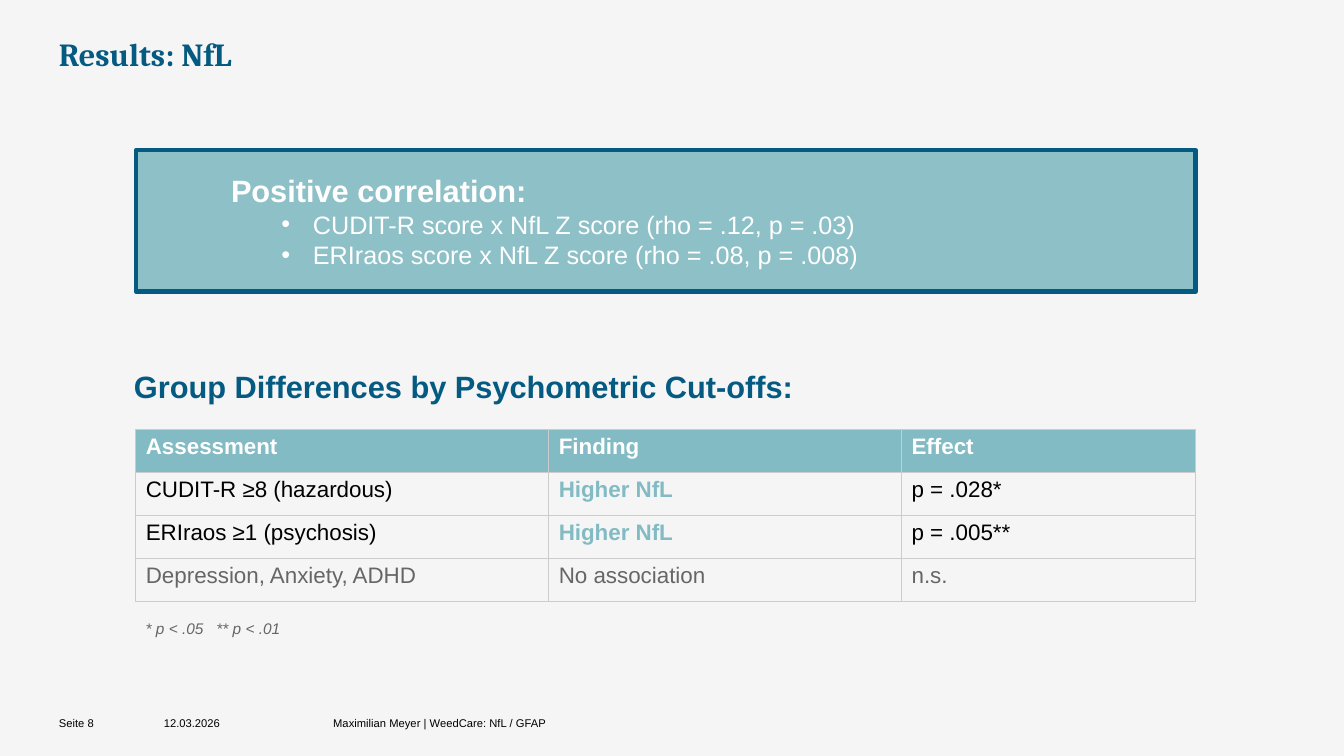
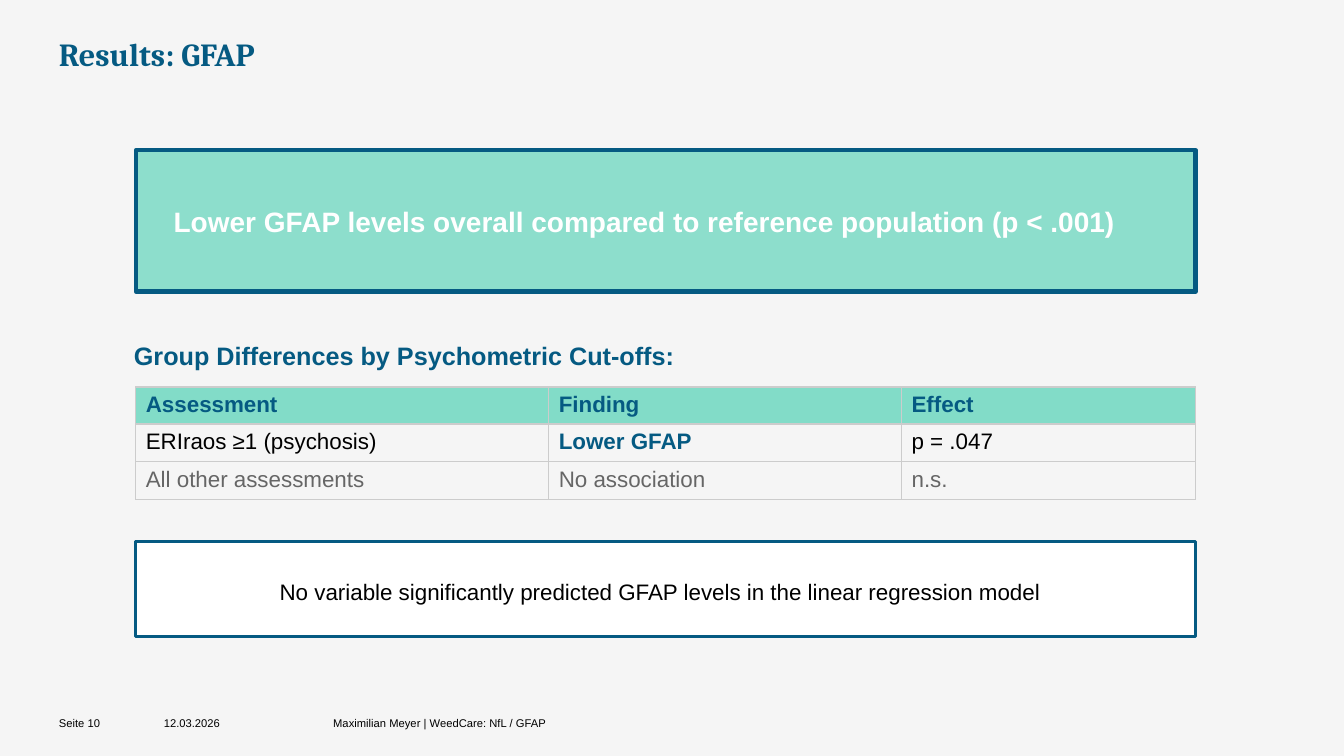
"""Build two result slides on biomarker levels and psychometric scores."""
from lxml.etree import SubElement as Sub
from pptx import Presentation
from pptx.dml.color import RGBColor as Rgb
from pptx.enum.shapes import MSO_SHAPE as Shape
from pptx.enum.text import MSO_ANCHOR as Anchor, PP_ALIGN as Align
from pptx.oxml.ns import qn
from pptx.util import Pt

COLORS = {
    "back": "F5F5F5", "navy": "055A82", "teal": "82BBC3", "mint": "82DCC8",
    "white": "FFFFFF", "black": "000000", "gray": "666666", "rule": "CCCCCC",
}
LEFT, WIDTH = 97, 757
COLS = (295, 252, 210)
FOOT = (42, 117, 238)
HEADS = ("Assessment", "Finding", "Effect")
GROUPS = "Group Differences by Psychometric Cut-offs:"


def color(name):
    """Return the named colour."""
    return Rgb.from_string(COLORS[name])


def style(para, size, tone, bold=False, italic=False, face="Arial"):
    """Set the font of a whole paragraph."""
    font = para.font
    font.name, font.size = face, Pt(size)
    font.bold, font.italic = bold, italic
    font.color.rgb = color(tone)


def add_text(slide, box, text, size, tone, inset=7.2, tab=None, **look):
    """Add a one-line text box, with an optional tab stop."""
    frame = slide.shapes.add_textbox(*map(Pt, box)).text_frame
    frame.word_wrap = True
    frame.vertical_anchor = Anchor.MIDDLE
    frame.margin_left = frame.margin_right = Pt(inset)
    frame.margin_top = frame.margin_bottom = 0
    para = frame.paragraphs[0]
    para.text = text
    if tab:
        stops = Sub(para._p.get_or_add_pPr(), qn("a:tabLst"))
        Sub(stops, qn("a:tab"), pos=str(Pt(tab)), algn="l")
    style(para, size, tone, **look)


def add_panel(slide, top, height, fill, line, left, right=0, alpha=100):
    """Add a framed panel and return its text frame."""
    panel = slide.shapes.add_shape(
        Shape.RECTANGLE, Pt(LEFT), Pt(top), Pt(WIDTH), Pt(height))
    panel.shadow.inherit = False
    panel.fill.solid()
    panel.fill.fore_color.rgb = color(fill)
    if alpha < 100:
        tint = panel._element.spPr.find(qn("a:solidFill"))[0]
        Sub(tint, qn("a:alpha"), val=str(alpha * 1000))
    panel.line.color.rgb = color("navy")
    panel.line.width = Pt(line)
    frame = panel.text_frame
    frame.word_wrap = True
    frame.vertical_anchor = Anchor.MIDDLE
    frame.margin_left, frame.margin_right = Pt(left), Pt(right)
    return frame


def add_banner(slide, fill, left, title, size, items=()):
    """Add the key finding with optional bullet items."""
    frame = add_panel(slide, 107.3, 101, fill, 3, left, alpha=90)
    head = frame.paragraphs[0]
    head.text, head.alignment = title, Align.LEFT
    style(head, size, "white", bold=True)
    for item in items:
        para = frame.add_paragraph()
        para.text, para.level, para.alignment = item, 1, Align.LEFT
        props = para._p.get_or_add_pPr()
        props.set("marL", str(Pt(58.5)))
        props.set("indent", str(Pt(-22.5)))
        Sub(props, qn("a:buFont"), typeface="Arial")
        Sub(props, qn("a:buChar"), char="•")
        style(para, 18, "white")


def add_edges(cell):
    """Draw thin lines on all sides of a cell."""
    props = cell._tc.get_or_add_tcPr()
    for side in "LRTB":
        line = Sub(props, qn(f"a:ln{side}"), w=str(Pt(1)))
        fill = Sub(line, qn("a:solidFill"))
        Sub(fill, qn("a:srgbClr"), val=COLORS["rule"])


def add_grid(slide, top, sizes, rows, fill, head, mark):
    """Add the table of findings, its last row in gray."""
    grid = slide.shapes.add_table(
        len(sizes), len(COLS), Pt(LEFT), Pt(top), Pt(WIDTH),
        Pt(sum(sizes))).table
    grid.horz_banding = False
    for col, width in zip(grid.columns, COLS):
        col.width = Pt(width)
    for row, size in zip(grid.rows, sizes):
        row.height = Pt(size)
    for i, row in enumerate((HEADS, *rows)):
        for j, text in enumerate(row):
            cell = grid.cell(i, j)
            cell.text = text
            add_edges(cell)
            if i == 0:
                cell.fill.solid()
                cell.fill.fore_color.rgb = color(fill)
                tone, bold = head, True
            else:
                cell.fill.background()
                last = i == len(rows)
                bold = j == 1 and not last
                tone = "gray" if last else mark if bold else "black"
            style(cell.text_frame.paragraphs[0], 16, tone, bold)


def set_base(deck):
    """Set the slide size, background and title place; return the layout."""
    deck.slide_width, deck.slide_height = Pt(960), Pt(540)
    back = deck.slide_master.background.fill
    back.solid()
    back.fore_color.rgb = color("back")
    base = deck.slide_layouts.get_by_name("Title Only")
    title = base.placeholders[0]
    title.left, title.top = Pt(42), Pt(24.5)
    title.width, title.height = Pt(877), Pt(70.5)
    frame = title.text_frame
    frame.vertical_anchor = Anchor.TOP
    frame.margin_left = frame.margin_right = 0
    frame.margin_top = frame.margin_bottom = 0
    return base


def add_slide(deck, base, title, page):
    """Add a slide with its title and footer."""
    slide = deck.slides.add_slide(base)
    slide.shapes.title.text = title
    para = slide.shapes.title.text_frame.paragraphs[0]
    para.alignment = Align.LEFT
    style(para, 23, "navy", bold=True, face="Cambria")
    notes = (f"Seite {page}", "12.03.2026",
             "Maximilian Meyer | WeedCare: NfL / GFAP")
    for left, width, text in zip(FOOT, (60, 113, 297), notes):
        add_text(slide, (left, 505.5, width, 22), text, 8, "black", inset=0)
    return slide


def add_nfl(deck, base):
    """Add the slide on NfL."""
    slide = add_slide(deck, base, "Results: NfL", 8)
    add_banner(slide, "teal", 68, "Positive correlation:", 22, (
        "CUDIT-R score x NfL Z score (rho = .12, p = .03)",
        "ERIraos score x NfL Z score (rho = .08, p = .008)"))
    add_text(slide, (88.6, 265, 648, 22), GROUPS, 22, "navy", bold=True)
    add_grid(slide, 306.7, [30.8] * 4, (
        ("CUDIT-R ≥8 (hazardous)", "Higher NfL", "p = .028*"),
        ("ERIraos ≥1 (psychosis)", "Higher NfL", "p = .005**"),
        ("Depression, Anxiety, ADHD", "No association", "n.s."),
    ), "teal", "white", "teal")
    add_text(slide, (LEFT, 441.5, 648, 14.5), "* p < .05\t** p < .01",
             11, "gray", tab=50.5, italic=True)


def add_gfap(deck, base):
    """Add the slide on GFAP."""
    slide = add_slide(deck, base, "Results: GFAP", 10)
    add_banner(slide, "mint", 27, "Lower GFAP levels overall compared to "
               "reference population (p < .001)", 20)
    add_text(slide, (88.6, 242.6, 648, 22), GROUPS, 18, "navy", bold=True)
    add_grid(slide, 276.5, (25, 27, 27), (
        ("ERIraos ≥1 (psychosis)", "Lower GFAP", "p = .047"),
        ("All other assessments", "No association", "n.s."),
    ), "mint", "navy", "navy")
    frame = add_panel(slide, 386.6, 68, "white", 2, 0, right=8)
    frame.margin_top = Pt(7)
    para = frame.paragraphs[0]
    para.text = ("No variable significantly predicted GFAP levels "
                 "in the linear regression model")
    para.alignment = Align.CENTER
    style(para, 16, "black")


def main():
    """Build and save the deck."""
    deck = Presentation()
    base = set_base(deck)
    add_nfl(deck, base)
    add_gfap(deck, base)
    deck.save("out.pptx")


if __name__ == "__main__":
    main()
